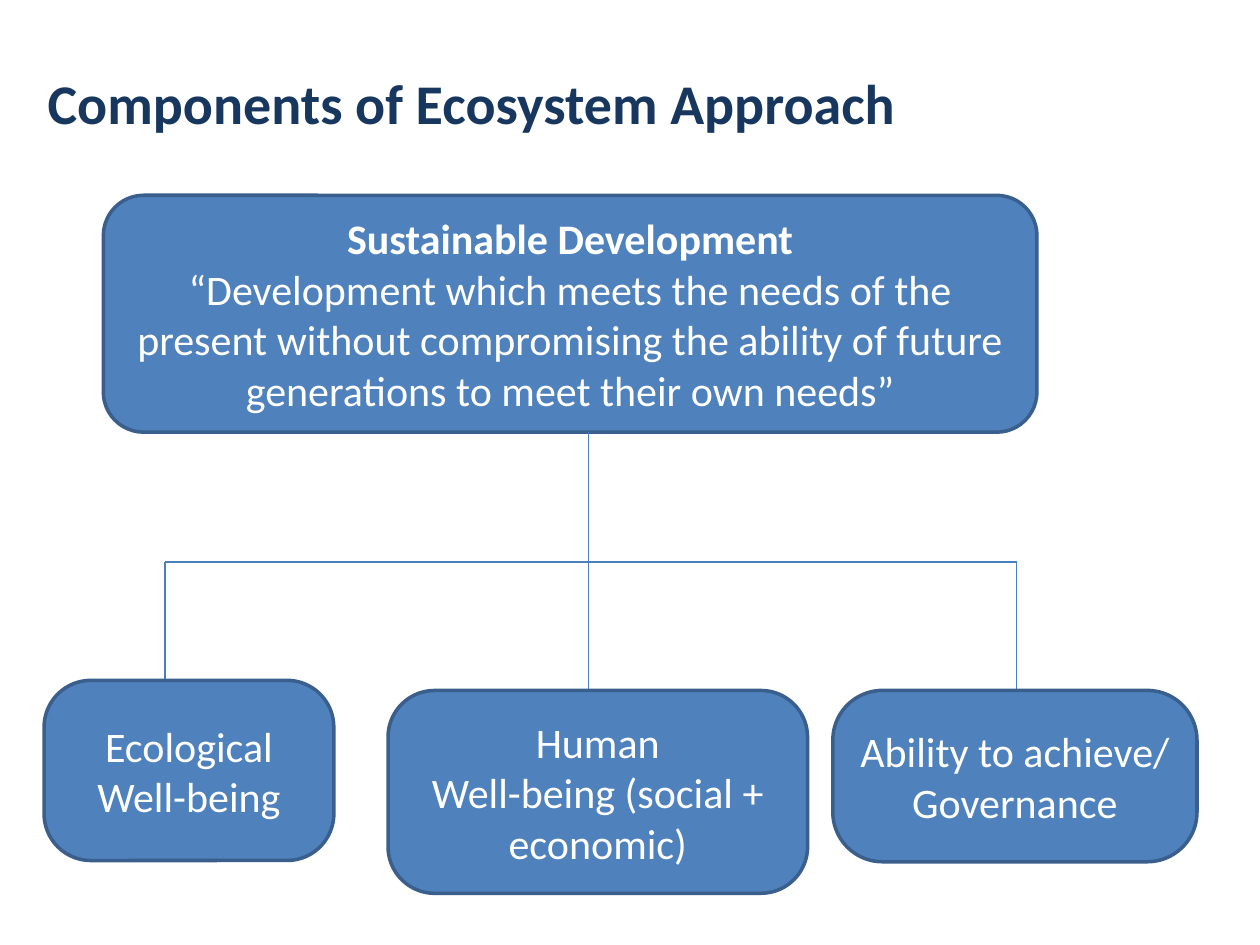
from lxml.etree import SubElement
from pptx import Presentation
from pptx.dml.color import RGBColor
from pptx.enum.shapes import MSO_CONNECTOR, MSO_SHAPE
from pptx.enum.text import MSO_ANCHOR, PP_ALIGN
from pptx.oxml.ns import qn
from pptx.util import Inches, Pt

NAVY = RGBColor(0x17, 0x37, 0x5E)
BLUE = RGBColor(0x4F, 0x81, 0xBD)
EDGE_BLUE = RGBColor(0x3A, 0x5F, 0x8C)
LINE_BLUE = RGBColor(0x4B, 0x7E, 0xBC)
WHITE = RGBColor(0xFF, 0xFF, 0xFF)

# The slide is a grid of 100 columns by 75 rows
COLUMNS, ROWS = 100, 75
CELL = Inches(0.1)

# Levels of the tree, in rows
ROOT_TOP, ROOT_HEIGHT = 15.5, 18.8
ROOT_BOTTOM = ROOT_TOP + ROOT_HEIGHT
BRANCH_ROW = 44.6
LEAF_ROW = 54.8

# Stems of the tree, in columns
LEFT_STEM, MIDDLE_STEM, RIGHT_STEM = 13.1, 46.7, 80.7

# Leaf boxes: text, left, top, width, height, corner
LEAVES = [
    (["Ability to achieve/ Governance"], 66.1, LEAF_ROW, 28.9, 13.6, 0.29),
    (["Human", "Well-being (social + economic)"],
     30.8, LEAF_ROW, 33.3, 16.1, 0.23),
    (["Ecological Well-being"], 3.5, 54, 23, 14.3, 0.26),
]


def grid(*cells):
    return [round(cell * CELL) for cell in cells]


def write_text(frame, paragraphs, size=24, color=WHITE,
               align=PP_ALIGN.CENTER, bold_first=False):
    frame.word_wrap = True
    frame.vertical_anchor = MSO_ANCHOR.MIDDLE
    for index, text in enumerate(paragraphs):
        paragraph = frame.paragraphs[0] if index == 0 else frame.add_paragraph()
        paragraph.alignment = align
        run = paragraph.add_run()
        run.text = text
        run.font.name = "Calibri"
        run.font.size = Pt(size)
        run.font.bold = bold_first and index == 0
        run.font.color.rgb = color


def add_title(slide, text):
    box = slide.shapes.add_textbox(*grid(2.8, 3, 71.7, 10.2))
    write_text(box.text_frame, [text], size=32, color=NAVY,
               align=PP_ALIGN.LEFT, bold_first=True)


def add_box(slide, paragraphs, left, top, width, height,
            corner=0.17, bold_first=False):
    shape = slide.shapes.add_shape(MSO_SHAPE.ROUNDED_RECTANGLE,
                                   *grid(left, top, width, height))
    shape.adjustments[0] = corner
    shape.shadow.inherit = False
    shape.fill.solid()
    shape.fill.fore_color.rgb = BLUE
    shape.line.color.rgb = EDGE_BLUE
    shape.line.width = Pt(2)
    write_text(shape.text_frame, paragraphs, bold_first=bold_first)


def add_line(slide, start_column, start_row, end_column, end_row):
    connector = slide.shapes.add_connector(
        MSO_CONNECTOR.STRAIGHT,
        *grid(start_column, start_row, end_column, end_row))
    connector.line.color.rgb = LINE_BLUE
    connector.line.width = Pt(0.75)
    SubElement(connector._element.spPr, qn("a:effectLst"))


def main():
    presentation = Presentation()
    presentation.slide_width, presentation.slide_height = grid(COLUMNS, ROWS)
    slide = presentation.slides.add_slide(presentation.slide_layouts[6])

    # Title and root of the tree
    add_title(slide, "Components of Ecosystem Approach")
    add_box(slide, [
        "Sustainable Development",
        "“Development which meets the needs of the present without "
        "compromising the ability of future generations to meet their "
        "own needs”",
    ], 8.2, ROOT_TOP, 74.1, ROOT_HEIGHT, bold_first=True)

    # Trunk, branch and outer stems
    add_line(slide, MIDDLE_STEM, ROOT_BOTTOM, MIDDLE_STEM, LEAF_ROW)
    add_line(slide, LEFT_STEM, BRANCH_ROW, RIGHT_STEM, BRANCH_ROW)
    for column in (LEFT_STEM, RIGHT_STEM):
        add_line(slide, column, BRANCH_ROW, column, LEAF_ROW)

    # Leaf boxes cover the ends of the stems
    for leaf in LEAVES:
        add_box(slide, *leaf)

    presentation.save("out.pptx")


if __name__ == "__main__":
    main()
